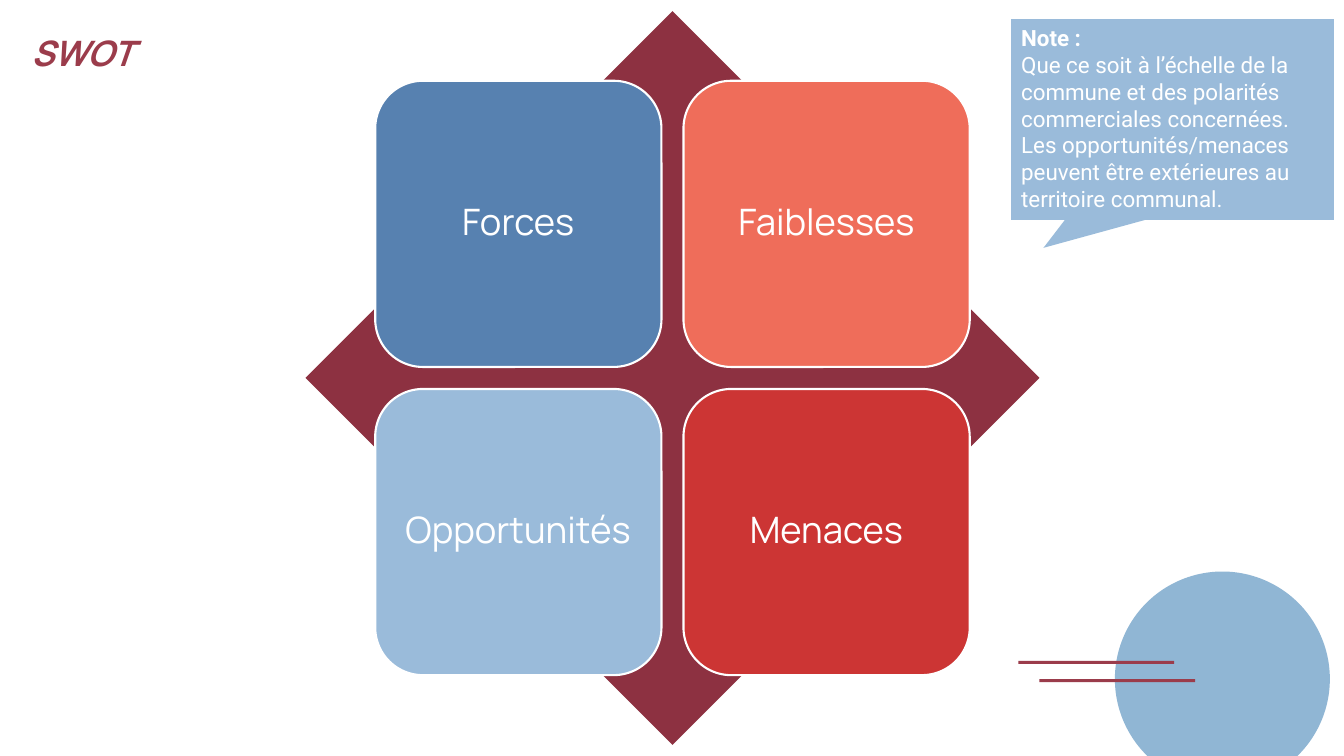
from dataclasses import dataclass

from pptx import Presentation
from pptx import util as u
from pptx.dml.color import RGBColor
from pptx.enum import shapes, text

SHAPE = shapes.MSO_SHAPE
ALIGN = text.PP_ALIGN
ANCHOR = text.MSO_ANCHOR


@dataclass(frozen=True)
class Theme:
    white: str = "FFFFFF"
    wine: str = "9B3C4B"
    diamond: str = "8D3141"
    circle: str = "90B6D4"
    strengths: str = "5781B0"
    weaknesses: str = "EF6D5A"
    sky: str = "9ABBDA"
    threats: str = "CC3534"
    heading_font: str = "Manrope"
    note_font: str = "Roboto"
    title_size: int = 25
    tile_size: int = 26
    note_size: int = 16


THEME = Theme()


def add_block(slide, kind, box, fill, outline=None):
    """Add a flat preset shape in a box of left, top, width, height."""
    shape = slide.shapes.add_shape(kind, *(u.Inches(length) for length in box))
    shape.shadow.inherit = False
    shape.fill.solid()
    shape.fill.fore_color.rgb = RGBColor.from_string(fill)
    if outline:
        shape.line.color.rgb = RGBColor.from_string(outline)
        shape.line.width = u.Pt(1.5)
    else:
        shape.line.fill.background()
    return shape


def write(frame, lines, color, paragraph_format, margin=None, **font_format):
    """Fill a text frame with (wording, bold) lines sharing one format."""
    frame.word_wrap = True
    if margin is not None:
        for side in ("left", "top", "right", "bottom"):
            setattr(frame, f"margin_{side}", u.Inches(margin))
    for index, (wording, bold) in enumerate(lines):
        paragraph = frame.add_paragraph() if index else frame.paragraphs[0]
        for name, value in paragraph_format.items():
            setattr(paragraph, name, value)
        run = paragraph.add_run()
        run.text = wording
        for name, value in {**font_format, "bold": bold}.items():
            setattr(run.font, name, value)
        run.font.color.rgb = RGBColor.from_string(color)


def add_corner_decoration(slide, box):
    left, top, width, height = box
    # Circle running off the bottom edge
    diameter = 0.69 * width
    add_block(slide, SHAPE.OVAL, (left + width - diameter, top, diameter, diameter), THEME.circle)
    # Two staggered bars
    for row in (1, 0):
        bar = (left + 0.21 * row, top + 0.4 * height + 0.18 * row, 0.5 * width, 0.03)
        add_block(slide, SHAPE.RECTANGLE, bar, THEME.wine)


def add_title(slide, box):
    title = slide.shapes.add_textbox(*(u.Inches(length) for length in box))
    write(title.text_frame, [("SWOT", True)], THEME.wine,
          {"alignment": ALIGN.LEFT, "line_spacing": u.Pt(52.8)}, margin=0,
          name=THEME.heading_font, size=u.Pt(THEME.title_size), italic=True)


def add_swot_matrix(slide, box):
    left, top, side, _ = box
    add_block(slide, SHAPE.DIAMOND, box, THEME.diamond)
    # Four tiles, two by two, as shares of the diamond's side
    inset, tile, step = 0.095 * side, 0.39 * side, 0.42 * side
    quadrants = [
        ("Forces", THEME.strengths),
        ("Faiblesses", THEME.weaknesses),
        ("Opportunités", THEME.sky),
        ("Menaces", THEME.threats),
    ]
    for index, (label, fill) in enumerate(quadrants):
        row, column = divmod(index, 2)
        place = (left + inset + column * step, top + inset + row * step, tile, tile)
        shape = add_block(slide, SHAPE.ROUNDED_RECTANGLE, place, fill, THEME.white)
        shape.text_frame.vertical_anchor = ANCHOR.MIDDLE
        write(shape.text_frame, [(label, False)], THEME.white,
              {"alignment": ALIGN.CENTER, "line_spacing": 0.9}, margin=0.11,
              name=THEME.heading_font, size=u.Pt(THEME.tile_size))


def add_note(slide, box):
    callout = add_block(slide, SHAPE.RECTANGULAR_CALLOUT, box, THEME.sky)
    callout.adjustments[0], callout.adjustments[1] = -0.4, 0.64
    callout.text_frame.vertical_anchor = ANCHOR.TOP
    lines = [
        ("Note :", True),
        ("Que ce soit à l’échelle de la commune et des polarités commerciales concernées.", False),
        ("Les opportunités/menaces peuvent être extérieures au territoire communal.", False),
    ]
    write(callout.text_frame, lines, THEME.white, {"alignment": ALIGN.LEFT},
          name=THEME.note_font, size=u.Pt(THEME.note_size))


def main():
    presentation = Presentation()
    presentation.slide_width = u.Inches(13.33)
    presentation.slide_height = u.Inches(7.5)
    slide = presentation.slides.add_slide(presentation.slide_layouts[6])
    add_corner_decoration(slide, (10.1, 5.67, 3.09, 2.22))
    add_title(slide, (0.31, 0, 9.56, 0.66))
    add_swot_matrix(slide, (3.03, 0.11, 7.28, 7.28))
    add_note(slide, (10.03, 0.19, 3.2, 1.99))
    presentation.save("out.pptx")


if __name__ == "__main__":
    main()
